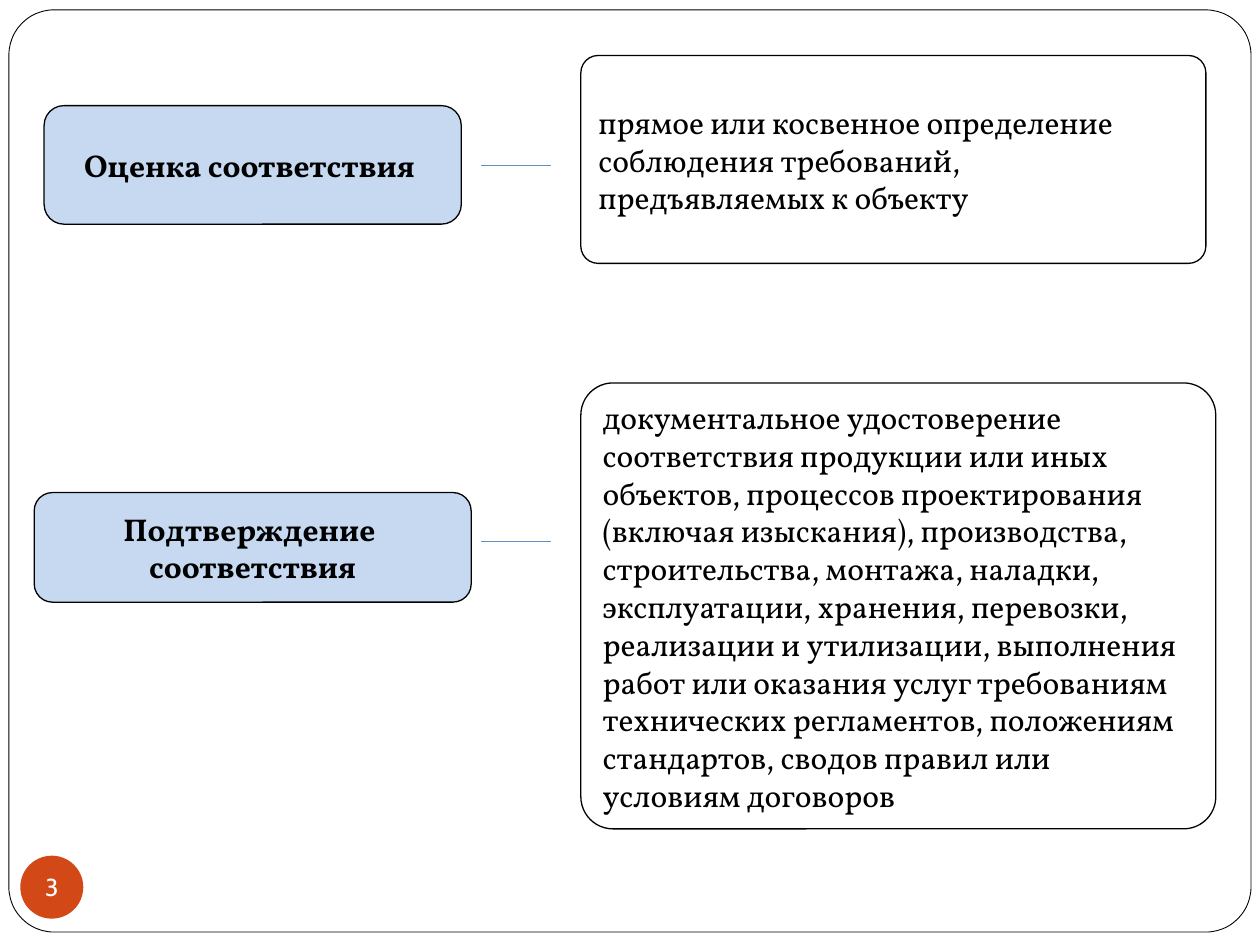
"""Build a slide that defines conformity assessment and conformity confirmation."""
from dataclasses import dataclass

from lxml import etree
from pptx import Presentation
from pptx.dml.color import RGBColor
from pptx.enum import shapes, text
from pptx.oxml.ns import qn
from pptx.util import Cm, Pt


@dataclass(frozen=True)
class Theme:
    ink: str = "000000"
    paper: str = "FFFFFF"
    term_fill: str = "C6D9F1"
    link: str = "6590C5"
    badge: str = "D34817"
    body_font: str = "Vollkorn"
    number_font: str = "Cabin"
    body_size: int = 18
    number_size: int = 14
    frame_line: float = 0.5
    line: float = 0.75


THEME = Theme()
FRAME = (0.18, 0.2, 25.04, 18.59)
BADGE = (0.41, 17.25, 1.27, 1.27)
LINK_START, LINK_END = 9.7, 11.1
PAGE_NUMBER = "3"

DEFINITIONS = [
    {
        "term": ["Оценка соответствия "],
        "term_box": (0.89, 2.13, 8.41, 2.39),
        "meaning": [
            "прямое или косвенное определение ",
            "соблюдения требований, ",
            "предъявляемых к объекту",
        ],
        "meaning_box": (11.71, 1.12, 12.6, 4.19),
        "meaning_corner": 0.083,
        "link_y": 3.33,
    },
    {
        "term": ["Подтверждение ", "соответствия"],
        "term_box": (0.69, 9.93, 8.81, 2.21),
        "meaning": [
            "документальное удостоверение ",
            "соответствия продукции или иных ",
            "объектов, процессов проектирования",
            "(включая изыскания), производства, ",
            "строительства, монтажа, наладки, ",
            "эксплуатации, хранения, перевозки, ",
            "реализации и утилизации, выполнения ",
            "работ или оказания услуг требованиям ",
            "технических регламентов, положениям ",
            "стандартов, сводов правил или ",
            "условиям договоров ",
        ],
        "meaning_box": (11.71, 7.72, 12.8, 8.99),
        "meaning_corner": 0.072,
        "link_y": 10.92,
    },
]


def color(value):
    return RGBColor.from_string(value)


def add_panel(slide, kind, box, fill, line_width=None, corner=None):
    panel = slide.shapes.add_shape(kind, *map(Cm, box))
    panel.shadow.inherit = False
    panel.fill.solid()
    panel.fill.fore_color.rgb = color(fill)
    if line_width is None:
        panel.line.fill.background()
    else:
        panel.line.color.rgb = color(THEME.ink)
        panel.line.width = Pt(line_width)
    if corner is not None:
        panel.adjustments[0] = corner
    return panel


def write(panel, lines, align, font=THEME.body_font, size=THEME.body_size,
          ink=THEME.ink, bold=False):
    frame = panel.text_frame
    frame.word_wrap = False
    frame.vertical_anchor = text.MSO_ANCHOR.MIDDLE
    frame.text = "\n".join(lines)
    for paragraph in frame.paragraphs:
        paragraph.alignment = align
        paragraph.font.name = font
        paragraph.font.size = Pt(size)
        paragraph.font.bold = bold
        paragraph.font.color.rgb = color(ink)


def add_link(slide, y):
    link = slide.shapes.add_connector(
        shapes.MSO_CONNECTOR.STRAIGHT, Cm(LINK_START), Cm(y), Cm(LINK_END), Cm(y))
    link.line.color.rgb = color(THEME.link)
    link.line.width = Pt(THEME.line)
    etree.SubElement(link._element.spPr, qn("a:effectLst"))


def add_badge(slide):
    badge = add_panel(slide, shapes.MSO_SHAPE.OVAL, BADGE, THEME.badge)
    frame = badge.text_frame
    frame.margin_left = frame.margin_right = frame.margin_top = frame.margin_bottom = 0
    write(badge, [PAGE_NUMBER], text.PP_ALIGN.CENTER, THEME.number_font,
          THEME.number_size, THEME.paper)


def add_definition(slide, entry):
    rounded = shapes.MSO_SHAPE.ROUNDED_RECTANGLE
    term = add_panel(slide, rounded, entry["term_box"], THEME.term_fill,
                     THEME.line, 0.167)
    write(term, entry["term"], text.PP_ALIGN.CENTER, bold=True)
    add_link(slide, entry["link_y"])
    meaning = add_panel(slide, rounded, entry["meaning_box"], THEME.paper,
                        THEME.line, entry["meaning_corner"])
    write(meaning, entry["meaning"], text.PP_ALIGN.JUSTIFY)


def main():
    deck = Presentation()
    deck.slide_width, deck.slide_height = Cm(25.4), Cm(19.05)
    slide = deck.slides.add_slide(deck.slide_layouts[6])
    add_panel(slide, shapes.MSO_SHAPE.ROUNDED_RECTANGLE, FRAME, THEME.paper,
              THEME.frame_line, 0.049)
    add_badge(slide)
    for entry in DEFINITIONS:
        add_definition(slide, entry)
    deck.save("out.pptx")


if __name__ == "__main__":
    main()
